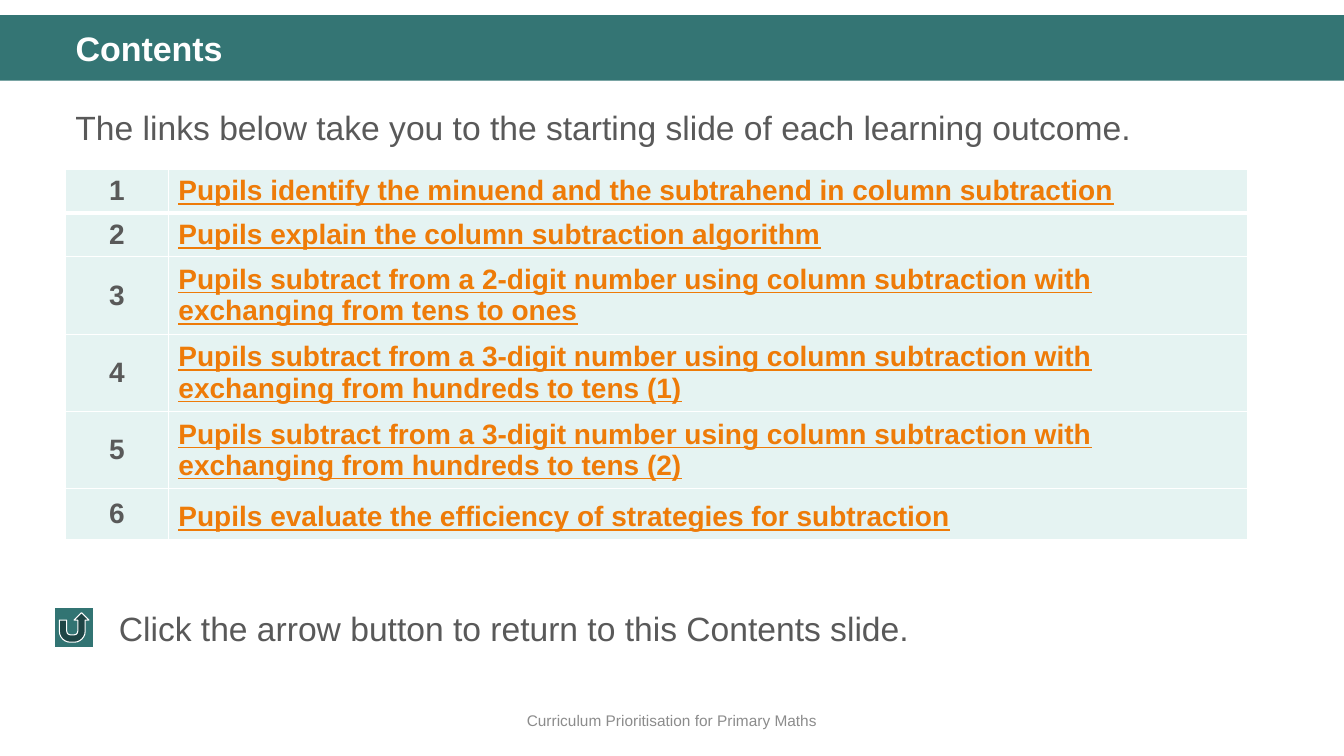
from dataclasses import dataclass

from lxml import etree
from pptx import Presentation
from pptx.dml.color import RGBColor
from pptx.enum.shapes import MSO_SHAPE
from pptx.enum.text import MSO_ANCHOR, MSO_AUTO_SIZE, PP_ALIGN
from pptx.oxml.ns import qn
from pptx.util import Inches, Pt

RECTANGLE = MSO_SHAPE.RECTANGLE
RETURN_BUTTON = MSO_SHAPE.ACTION_BUTTON_RETURN
TOP, MIDDLE = MSO_ANCHOR.TOP, MSO_ANCHOR.MIDDLE
LEFT, CENTER = PP_ALIGN.LEFT, PP_ALIGN.CENTER
NO_AUTOFIT = MSO_AUTO_SIZE.NONE
TITLE_ONLY = 5
FONT = "Arial"
COLORS = {
    "banner": "347574",
    "button": "327473",
    "white": "FFFFFF",
    "body": "595959",
    "footer": "8C8C8C",
    "link": "EE7B08",
    "cell": "E5F3F2",
}


@dataclass(frozen=True)
class Box:
    left: float
    top: float
    width: float
    height: float

    def inches(self) -> tuple:
        return tuple(Inches(v) for v in (self.left, self.top, self.width, self.height))


@dataclass(frozen=True)
class TextStyle:
    size: float
    color: str
    bold: bool = False
    underline: bool = False
    align: PP_ALIGN = LEFT
    line_spacing: float = 1.0
    space_before: float = 0


@dataclass(frozen=True)
class Caption:
    text: str
    box: Box
    style: TextStyle
    anchor: MSO_ANCHOR = TOP


@dataclass(frozen=True)
class Outcome:
    text: str
    height: float
    line_spacing: float = 1.0


CAPTIONS = [
    Caption("Curriculum Prioritisation for Primary Maths", Box(0, 6.95, 13.33, 0.4),
            TextStyle(11, "footer", align=CENTER), MIDDLE),
    Caption("The links below take you to the starting slide of each learning outcome.",
            Box(0.65, 0.93, 12.18, 3.51),
            TextStyle(24, "body", line_spacing=1.2, space_before=10)),
    Caption("Click the arrow button to return to this Contents slide.",
            Box(1.08, 5.98, 11.32, 0.5), TextStyle(24, "body")),
]
OUTCOMES = [
    Outcome("Pupils identify the minuend and the subtrahend in column subtraction", 0.41),
    Outcome("Pupils explain the column subtraction algorithm", 0.41),
    Outcome("Pupils subtract from a 2-digit number using column subtraction with "
            "exchanging from tens to ones", 0.72),
    Outcome("Pupils subtract from a 3-digit number using column subtraction with "
            "exchanging from hundreds to tens (1)", 0.72),
    Outcome("Pupils subtract from a 3-digit number using column subtraction with "
            "exchanging from hundreds to tens (2)", 0.72),
    Outcome("Pupils evaluate the efficiency of strategies for subtraction", 0.46, 1.2),
]
COLUMN_WIDTHS = (1.02, 10.7)


def rgb(name: str) -> RGBColor:
    return RGBColor.from_string(COLORS[name])


def write(frame, text: str, style: TextStyle) -> None:
    paragraph = frame.paragraphs[0]
    paragraph.alignment = style.align
    paragraph.line_spacing = style.line_spacing
    paragraph.space_before = Pt(style.space_before)
    run = paragraph.add_run()
    run.text = text
    run.font.name = FONT
    run.font.size = Pt(style.size)
    run.font.bold = style.bold
    run.font.underline = style.underline
    run.font.color.rgb = rgb(style.color)


def add_caption(slide, caption: Caption) -> None:
    frame = slide.shapes.add_textbox(*caption.box.inches()).text_frame
    frame.word_wrap = True
    frame.vertical_anchor = caption.anchor
    write(frame, caption.text, caption.style)


def add_solid(slide, preset: MSO_SHAPE, box: Box, fill: str):
    shape = slide.shapes.add_shape(preset, *box.inches())
    shape.shadow.inherit = False
    shape.fill.solid()
    shape.fill.fore_color.rgb = rgb(fill)
    shape.line.fill.background()
    return shape


def set_borders(cell, top: float, bottom: float) -> None:
    properties = cell._tc.get_or_add_tcPr()
    widths = {"a:lnL": 1, "a:lnR": 1, "a:lnT": top, "a:lnB": bottom}
    for position, (tag, width) in enumerate(widths.items()):
        border = etree.Element(qn(tag), w=str(Pt(width)))
        fill = etree.SubElement(border, qn("a:solidFill"))
        etree.SubElement(fill, qn("a:srgbClr"), val=COLORS["white"])
        properties.insert(position, border)


def add_outcomes(slide) -> None:
    box = Box(0.65, 1.68, sum(COLUMN_WIDTHS), sum(o.height for o in OUTCOMES))
    table = slide.shapes.add_table(len(OUTCOMES), len(COLUMN_WIDTHS), *box.inches()).table
    table.first_row = False
    table.horz_banding = False
    for column, width in zip(table.columns, COLUMN_WIDTHS):
        column.width = Inches(width)
    for index, outcome in enumerate(OUTCOMES):
        table.rows[index].height = Inches(outcome.height)
        number = TextStyle(20, "body", bold=True, align=CENTER)
        link = TextStyle(20, "link", bold=True, underline=True,
                         line_spacing=outcome.line_spacing)
        entries = ((str(index + 1), number), (outcome.text, link))
        for cell, (text, style) in zip(table.rows[index].cells, entries):
            cell.vertical_anchor = MIDDLE
            cell.fill.solid()
            cell.fill.fore_color.rgb = rgb("cell")
            set_borders(cell, 3 if index == 1 else 1, 3 if index == 0 else 1)
            write(cell.text_frame, text, style)


def add_title(slide) -> None:
    title = slide.shapes.title
    title.left, title.top, title.width, title.height = Box(0.65, 0.27, 12.18, 0.47).inches()
    title.text_frame.auto_size = NO_AUTOFIT
    title.text_frame.vertical_anchor = TOP
    write(title.text_frame, "Contents",
          TextStyle(24.3, "white", bold=True, line_spacing=0.9))
    title.element.getparent().append(title.element)


def main() -> None:
    deck = Presentation()
    deck.slide_width, deck.slide_height = Inches(13.33), Inches(7.5)
    slide = deck.slides.add_slide(deck.slide_layouts[TITLE_ONLY])
    add_solid(slide, RECTANGLE, Box(0, 0.15, 13.33, 0.65), "banner")
    for caption in CAPTIONS:
        add_caption(slide, caption)
    add_outcomes(slide)
    button = add_solid(slide, RETURN_BUTTON, Box(0.54, 6.03, 0.39, 0.39), "button")
    button.line.color.rgb = rgb("white")
    button.line.width = Pt(0.75)
    add_title(slide)
    deck.save("out.pptx")


if __name__ == "__main__":
    main()
